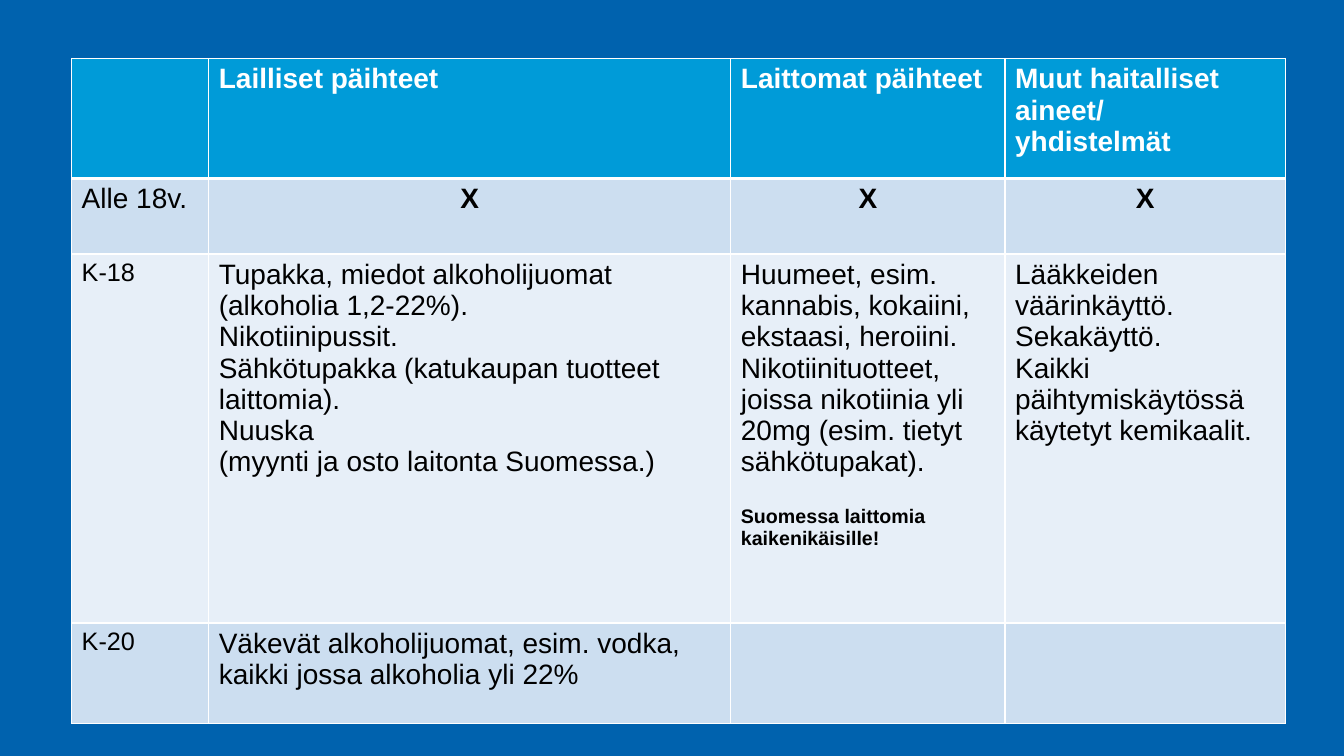
"""Build a slide with a table of substances by age limit."""
from dataclasses import dataclass

from lxml.etree import SubElement
from pptx import Presentation
from pptx.dml.color import RGBColor
from pptx.enum.text import PP_ALIGN
from pptx.oxml.ns import qn
from pptx.table import _Cell
from pptx.util import Inches, Pt

WHITE, BLACK = "FFFFFF", "000000"
BACKGROUND, HEADER, BAND, LIGHT_BAND = "0062AE", "009BD8", "CCDEF0", "E7EFF8"
LEFT_PERCENT, TOP_PERCENT = 5.33, 7.73
COLUMN_PERCENTS = (10.2, 38.85, 20.4, 20.85)
THIN, THICK = 1, 3


@dataclass(frozen=True)
class Line:
    text: str
    size: int = 20
    bold: bool = False
    color: str = BLACK
    centered: bool = False
    space_before: int = 0


@dataclass(frozen=True)
class Row:
    height_percent: float
    fill: str
    cells: tuple[tuple[Line, ...], ...]
    top: int = THIN
    bottom: int = THIN


def lines(*texts: str) -> tuple[Line, ...]:
    return tuple(Line(text) for text in texts)


def heading(*texts: str) -> tuple[Line, ...]:
    return tuple(Line(text, bold=True, color=WHITE) for text in texts)


def age(text: str) -> tuple[Line, ...]:
    return (Line(text, size=18),)


CROSS = (Line("X", bold=True, centered=True),)
ROWS = (
    Row(15.87, HEADER, (
        (),
        heading("Lailliset päihteet"),
        heading("Laittomat päihteet"),
        heading("Muut haitalliset aineet/", "yhdistelmät"),
    ), bottom=THICK),
    Row(10, BAND, (lines("Alle 18v."), CROSS, CROSS, CROSS), top=THICK),
    Row(48.8, LIGHT_BAND, (
        age("K-18"),
        lines(
            "Tupakka, miedot alkoholijuomat (alkoholia 1,2-22%).",
            "Nikotiinipussit.",
            "Sähkötupakka (katukaupan tuotteet laittomia).",
            "Nuuska",
            "(myynti ja osto laitonta Suomessa.)",
        ),
        lines(
            "Huumeet, esim. kannabis, kokaiini, ekstaasi, heroiini.",
            "Nikotiinituotteet, joissa nikotiinia yli 20mg (esim. tietyt sähkötupakat).",
        ) + (
            Line("Suomessa laittomia", 14, True, space_before=20),
            Line("kaikenikäisille!", 14, True),
        ),
        lines(
            "Lääkkeiden",
            "väärinkäyttö.",
            "Sekakäyttö.",
            "Kaikki päihtymiskäytössä",
            "käytetyt kemikaalit.",
        ),
    )),
    Row(13.33, BAND, (
        age("K-20"),
        lines("Väkevät alkoholijuomat, esim. vodka, kaikki jossa alkoholia yli 22%"),
        (),
        (),
    )),
)


def rgb(color: str) -> RGBColor:
    return RGBColor.from_string(color)


def share(length: int, percent: float) -> int:
    return round(length * percent / 100)


def style_cell(cell: _Cell, row: Row) -> None:
    properties = cell._tc.get_or_add_tcPr()
    borders = {"a:lnL": THIN, "a:lnR": THIN, "a:lnT": row.top, "a:lnB": row.bottom}
    for tag, width in borders.items():
        border = SubElement(properties, qn(tag), w=str(Pt(width)))
        border_fill = SubElement(border, qn("a:solidFill"))
        SubElement(border_fill, qn("a:srgbClr"), val=WHITE)
    cell.fill.solid()
    cell.fill.fore_color.rgb = rgb(row.fill)


def write_cell(cell: _Cell, content: tuple[Line, ...]) -> None:
    text_frame = cell.text_frame
    text_frame.text = "\n".join(line.text for line in content)
    for paragraph, line in zip(text_frame.paragraphs, content):
        if line.centered:
            paragraph.alignment = PP_ALIGN.CENTER
        if line.space_before:
            paragraph.space_before = Pt(line.space_before)
        for run in paragraph.runs:
            run.font.name = "Arial"
            run.font.size = Pt(line.size)
            run.font.bold = line.bold
            run.font.color.rgb = rgb(line.color)


def main() -> None:
    presentation = Presentation()
    presentation.slide_width = Inches(13.33)
    presentation.slide_height = Inches(7.5)
    slide_width, slide_height = presentation.slide_width, presentation.slide_height
    slide = presentation.slides.add_slide(presentation.slide_layouts[6])
    slide.background.fill.solid()
    slide.background.fill.fore_color.rgb = rgb(BACKGROUND)

    table = slide.shapes.add_table(
        len(ROWS),
        len(COLUMN_PERCENTS),
        share(slide_width, LEFT_PERCENT),
        share(slide_height, TOP_PERCENT),
        share(slide_width, sum(COLUMN_PERCENTS)),
        share(slide_height, sum(row.height_percent for row in ROWS)),
    ).table
    for column, percent in zip(table.columns, COLUMN_PERCENTS):
        column.width = share(slide_width, percent)
    for table_row, row in zip(table.rows, ROWS):
        table_row.height = share(slide_height, row.height_percent)
        for cell, content in zip(table_row.cells, row.cells):
            style_cell(cell, row)
            write_cell(cell, content)

    presentation.save("out.pptx")


if __name__ == "__main__":
    main()
